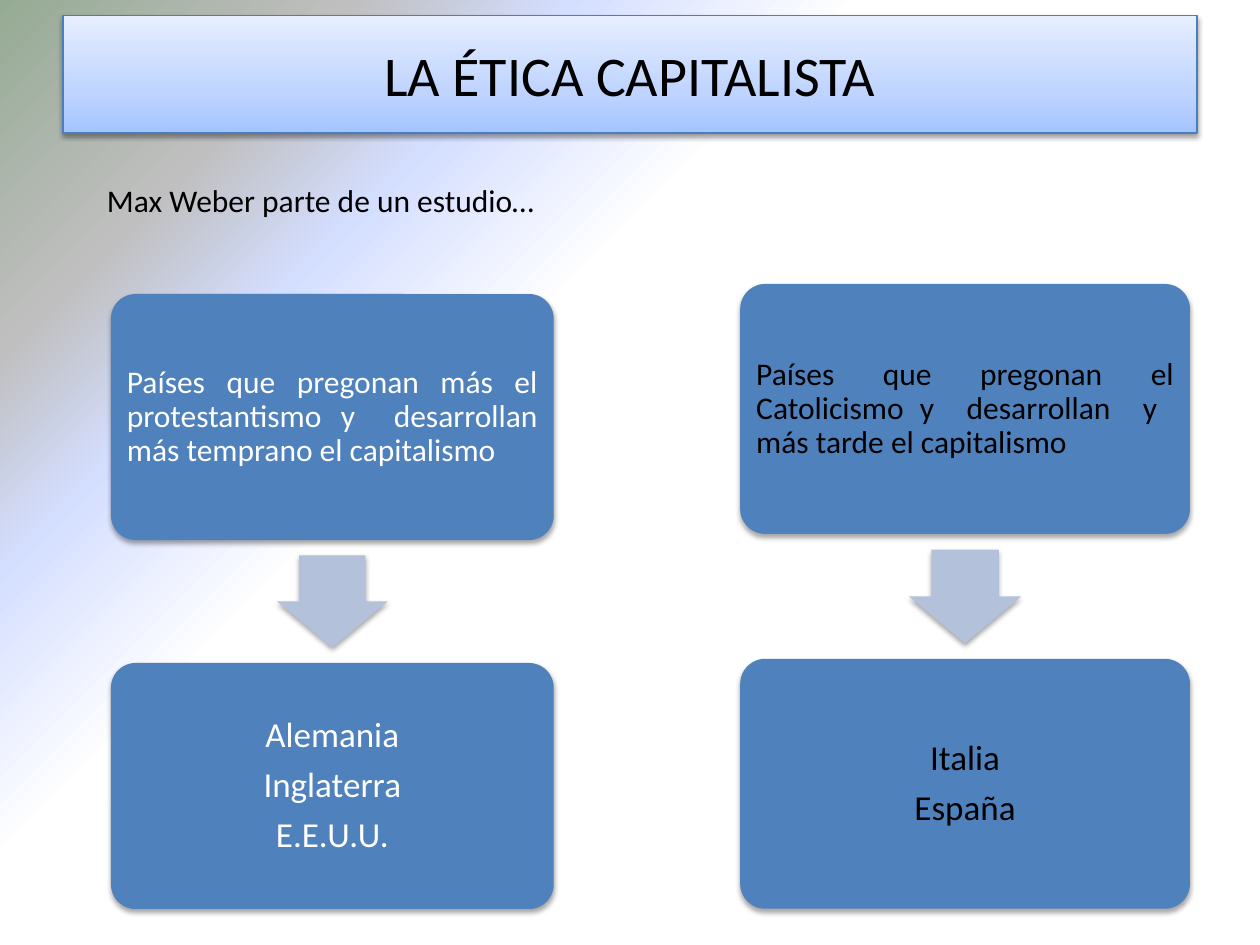
from lxml import etree
from pptx import Presentation
from pptx import util as u
from pptx.dml.color import RGBColor
from pptx.enum import shapes, text
from pptx.oxml.ns import qn

Pt = u.Pt
FONT = "Calibri"
BLACK = RGBColor(0x00, 0x00, 0x00)
WHITE = RGBColor(0xFF, 0xFF, 0xFF)
CARD_BLUE = RGBColor(0x4F, 0x81, 0xBD)
ARROW_BLUE = RGBColor(0xB3, 0xC1, 0xDB)
EDGE_BLUE = RGBColor(0x4B, 0x7E, 0xBC)
# Gradient stops: position %, colour, opacity %
TITLE_STOPS = [(0, RGBColor(0xA4, 0xC4, 0xFF), 100),
               (35, RGBColor(0xBF, 0xD4, 0xFF), 100),
               (100, RGBColor(0xE6, 0xEE, 0xFF), 100)]
PAGE_STOPS = [(61, WHITE, 100),
              (74, RGBColor(0xD4, 0xDE, 0xFF), 100),
              (84, RGBColor(0xBF, 0xBF, 0xBF), 43),
              (100, RGBColor(0x96, 0xAB, 0x94), 100)]


def add_node(parent, tag, **attributes):
    values = {name: str(value) for name, value in attributes.items()}
    return etree.SubElement(parent, qn(tag), values)


def add_color(parent, color, opacity):
    node = add_node(parent, "a:srgbClr", val=color)
    if opacity < 100:
        add_node(node, "a:alpha", val=opacity * 1000)


def set_gradient(holder, stops, angle=None):
    """Swap the holder's solid fill for a linear or corner gradient."""
    solid = holder.find(qn("a:solidFill"))
    gradient = etree.Element(qn("a:gradFill"), {"rotWithShape": "1"})
    stop_list = add_node(gradient, "a:gsLst")
    for position, color, opacity in stops:
        add_color(add_node(stop_list, "a:gs", pos=position * 1000), color, opacity)
    if angle is None:
        circle = add_node(gradient, "a:path", path="circle")
        add_node(circle, "a:fillToRect", l=100000, t=100000)
        add_node(gradient, "a:tileRect", r=-100000, b=-100000)
    else:
        add_node(gradient, "a:lin", ang=angle * 60000, scaled=1)
    holder.replace(solid, gradient)


def add_block(page, kind, left, top, width, height, fill, line=None, opacity=35):
    """Add a filled shape with a soft shadow below it."""
    shape = page.shapes.add_shape(kind, Pt(left), Pt(top), Pt(width), Pt(height))
    shape.fill.solid()
    shape.fill.fore_color.rgb = fill
    if line is None:
        shape.line.fill.background()
    else:
        shape.line.color.rgb = line
        shape.line.width = Pt(0.75)
    shape.shadow.inherit = False
    effects = shape._element.spPr.find(qn("a:effectLst"))
    shadow = add_node(effects, "a:outerShdw", blurRad=Pt(3.1), dist=Pt(1.7),
                      dir=5400000, rotWithShape=0)
    add_color(shadow, BLACK, opacity)
    return shape


def write(shape, lines, size, color, align=text.PP_ALIGN.CENTER,
          anchor=text.MSO_ANCHOR.MIDDLE, inset=None, spacing=1.0, after=0):
    frame = shape.text_frame
    frame.word_wrap = True
    frame.vertical_anchor = anchor
    if inset is not None:
        frame.margin_left = frame.margin_right = Pt(inset)
        frame.margin_top = frame.margin_bottom = Pt(inset)
    for index, line in enumerate(lines):
        para = frame.add_paragraph() if index else frame.paragraphs[0]
        para.alignment = align
        para.line_spacing = spacing
        para.space_after = Pt(after)
        span = para.add_run()
        span.text = line
        span.font.name = FONT
        span.font.size = Pt(size)
        span.font.color.rgb = color


def add_title(page, left, top, width, height):
    box = add_block(page, shapes.MSO_SHAPE.RECTANGLE, left, top, width, height,
                    WHITE, EDGE_BLUE, opacity=38)
    set_gradient(box._element.spPr, TITLE_STOPS, angle=270)
    write(box, ["LA ÉTICA CAPITALISTA"], 32, BLACK)


def add_intro(page, left, top, width, height):
    box = page.shapes.add_textbox(Pt(left), Pt(top), Pt(width), Pt(height))
    write(box, ["Max Weber parte de un estudio…"], 18, BLACK,
          align=text.PP_ALIGN.LEFT, anchor=text.MSO_ANCHOR.TOP)


def add_column(page, left, top, width, height, cause, countries, color):
    """Two cards with a down arrow centred in the gap between them."""
    card_height = height / 2.5
    arrow_width, arrow_height = card_height * 0.45, card_height * 0.375
    cards = [
        (top, [cause], 18, text.PP_ALIGN.JUSTIFY, 5),
        (top + 1.5 * card_height, countries, 20, text.PP_ALIGN.CENTER, 6),
    ]
    for card_top, lines, size, align, inset in cards:
        card = add_block(page, shapes.MSO_SHAPE.ROUNDED_RECTANGLE,
                         left, card_top, width, card_height, CARD_BLUE)
        card.adjustments[0] = 0.1
        write(card, lines, size, color, align=align, inset=inset,
              spacing=0.9, after=size * 0.35)

    arrow = add_block(page, shapes.MSO_SHAPE.DOWN_ARROW,
                      left + (width - arrow_width) / 2,
                      top + (height - arrow_height) / 2,
                      arrow_width, arrow_height, ARROW_BLUE)
    arrow.adjustments[0] = 0.6
    arrow.adjustments[1] = 0.5


def main():
    deck = Presentation()
    deck.slide_width, deck.slide_height = Pt(720), Pt(540)
    page = deck.slides.add_slide(deck.slide_layouts[6])

    # Background
    page.background.fill.solid()
    set_gradient(page._element.find(".//" + qn("p:bgPr")), PAGE_STOPS)

    # Title and opening line
    add_title(page, 36, 9, 648, 67)
    add_intro(page, 54, 100, 397, 29)

    # Protestant and Catholic columns
    add_column(page, 63.4, 168, 253, 351.4,
               "Países que pregonan más el protestantismo y  desarrollan "
               "más temprano el capitalismo",
               ["Alemania", "Inglaterra", "E.E.U.U."], WHITE)
    add_column(page, 423, 162.3, 257, 357,
               "Países que pregonan el Catolicismo y  desarrollan  y  "
               "más tarde el capitalismo",
               ["Italia", "España"], BLACK)

    deck.save("out.pptx")


if __name__ == "__main__":
    main()
